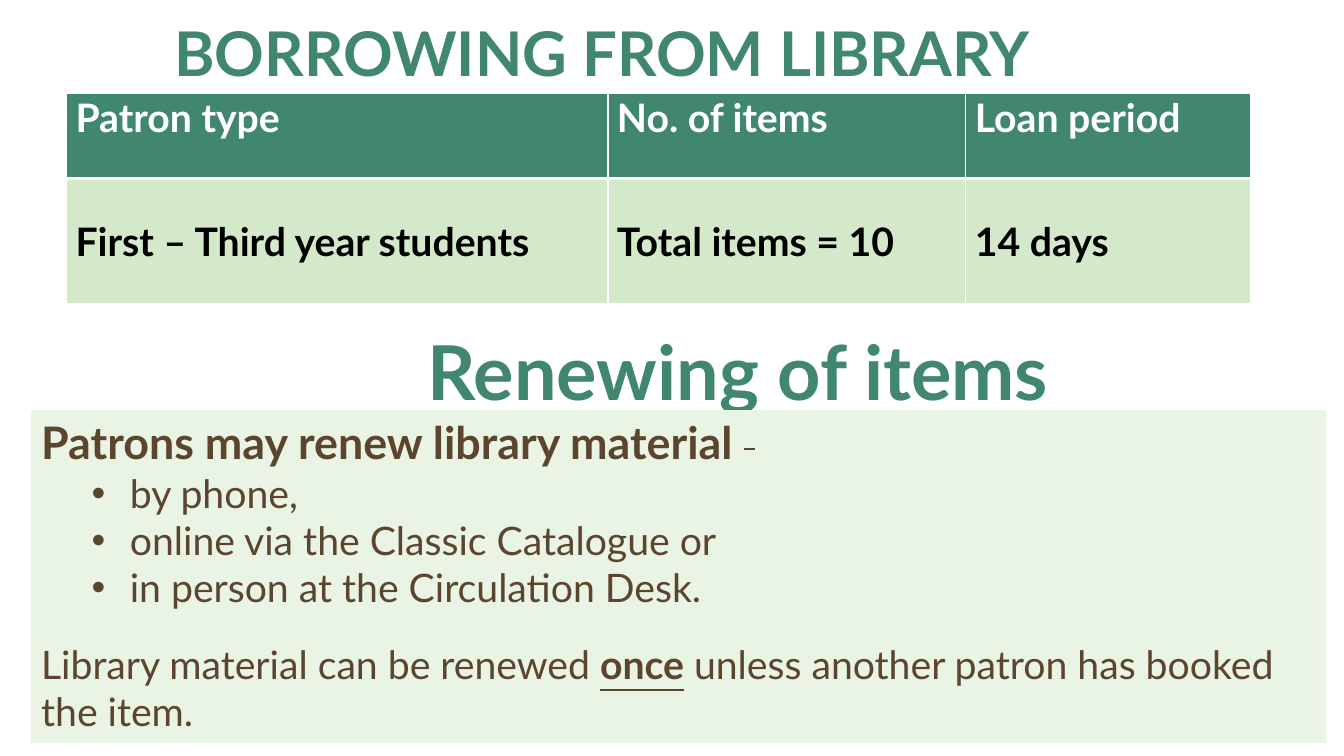
from dataclasses import dataclass

from lxml import etree
from pptx import Presentation
from pptx.dml.color import RGBColor
from pptx.enum.shapes import MSO_SHAPE
from pptx.enum.text import MSO_ANCHOR, PP_ALIGN
from pptx.oxml.ns import qn
from pptx.util import Inches, Pt

RECTANGLE = MSO_SHAPE.RECTANGLE
TOP, MIDDLE = MSO_ANCHOR.TOP, MSO_ANCHOR.MIDDLE
LEFT, CENTER = PP_ALIGN.LEFT, PP_ALIGN.CENTER


@dataclass(frozen=True)
class Theme:
    font: str = "Lato"
    green: str = "418770"
    light_green: str = "D4E9C9"
    pale_green: str = "EAF4E4"
    brown: str = "5C452E"
    black: str = "000000"
    white: str = "FFFFFF"
    title: int = 44
    heading: int = 54
    lead: int = 32
    body: int = 28


@dataclass(frozen=True)
class Heading:
    text: str
    box: tuple[float, float, float, float]
    size: int
    alignment: PP_ALIGN
    inset: tuple[float, float]
    line_spacing: float


@dataclass(frozen=True)
class TableRow:
    texts: tuple[str, ...]
    height: float
    fill: str
    color: str
    anchor: MSO_ANCHOR
    top_line: int
    bottom_line: int


@dataclass(frozen=True)
class BodyLine:
    runs: tuple[str, ...]
    size: int
    bold: bool | None = None
    bullet: bool = False
    space_before: float = 0


THEME = Theme()

HEADINGS = (
    Heading("BORROWING FROM LIBRARY", (1.73, 0.2, 10, 1.52), THEME.title, LEFT, (0, 0), 0.95),
    Heading("Renewing of items", (1.73, 3.17, 11.18, 1.01), THEME.heading, CENTER, (0.1, 0.05), 1),
)

COLUMN_WIDTHS = (5.37, 3.55, 2.82)
ROWS = (
    TableRow(("Patron type", "No. of items", "Loan period"),
             0.84, THEME.green, THEME.white, TOP, 1, 3),
    TableRow(("First – Third year students", "Total items = 10", "14 days"),
             1.24, THEME.light_green, THEME.black, MIDDLE, 3, 1),
)

BODY_LINES = (
    BodyLine(("Patrons may renew library material ", " "), THEME.lead, bold=True),
    BodyLine(("by phone,",), THEME.body, bullet=True),
    BodyLine(("online via the Classic Catalogue or",), THEME.body, bullet=True),
    BodyLine(("in person at the Circulation Desk.",), THEME.body, bullet=True),
    BodyLine(("Library material can be renewed ", "once",
              " unless another patron has booked the item."), THEME.body, space_before=21.6),
)


def style(paragraph, size: int, color: str, bold: bool | None) -> None:
    font = paragraph.font
    font.name, font.size, font.bold = THEME.font, Pt(size), bold
    font.color.rgb = RGBColor.from_string(color)


def add_heading(slide, heading: Heading) -> None:
    shape = slide.shapes.add_textbox(*map(Inches, heading.box))
    frame = shape.text_frame
    frame.word_wrap = True
    frame.margin_left = frame.margin_right = Inches(heading.inset[0])
    frame.margin_top = frame.margin_bottom = Inches(heading.inset[1])
    paragraph = frame.paragraphs[0]
    paragraph.text = heading.text
    paragraph.alignment = heading.alignment
    paragraph.line_spacing = heading.line_spacing
    style(paragraph, heading.size, THEME.green, True)


def set_borders(cell, top: int, bottom: int) -> None:
    properties = cell._tc.get_or_add_tcPr()
    widths = {"a:lnL": 1, "a:lnR": 1, "a:lnT": top, "a:lnB": bottom}
    for index, (tag, width) in enumerate(widths.items()):
        line = etree.Element(qn(tag), w=str(Pt(width)))
        fill = etree.SubElement(line, qn("a:solidFill"))
        etree.SubElement(fill, qn("a:srgbClr"), val=THEME.white)
        properties.insert(index, line)


def add_loan_table(slide) -> None:
    frame = slide.shapes.add_table(
        len(ROWS), len(COLUMN_WIDTHS), Inches(0.66), Inches(0.93),
        Inches(sum(COLUMN_WIDTHS)), Inches(sum(row.height for row in ROWS)))
    table = frame.table
    for column, width in zip(table.columns, COLUMN_WIDTHS):
        column.width = Inches(width)
    for table_row, row in zip(table.rows, ROWS):
        table_row.height = Inches(row.height)
        for cell, text in zip(table_row.cells, row.texts):
            cell.text = text
            cell.vertical_anchor = row.anchor
            cell.margin_left = cell.margin_right = Inches(0.09)
            cell.margin_top = cell.margin_bottom = 0
            cell.fill.solid()
            cell.fill.fore_color.rgb = RGBColor.from_string(row.fill)
            set_borders(cell, row.top_line, row.bottom_line)
            style(cell.text_frame.paragraphs[0], THEME.body, row.color, True)


def add_bullet(paragraph) -> None:
    paragraph.level = 1
    properties = paragraph._p.get_or_add_pPr()
    properties.set("marL", str(Inches(0.88)))
    properties.set("indent", str(Inches(-0.38)))
    etree.SubElement(properties, qn("a:buFont"), typeface="Arial")
    etree.SubElement(properties, qn("a:buChar"), char="•")


def add_renewal_panel(slide) -> None:
    shape = slide.shapes.add_shape(
        RECTANGLE, Inches(0.31), Inches(4.07), Inches(12.84), Inches(3.3))
    shape.shadow.inherit = False
    shape.fill.solid()
    shape.fill.fore_color.rgb = RGBColor.from_string(THEME.pale_green)
    shape.line.fill.background()
    frame = shape.text_frame
    frame.word_wrap = True
    frame.vertical_anchor = TOP
    for index, line in enumerate(BODY_LINES):
        paragraph = frame.add_paragraph() if index else frame.paragraphs[0]
        paragraph.alignment = LEFT
        if line.space_before:
            paragraph.space_before = Pt(line.space_before)
        if line.bullet:
            add_bullet(paragraph)
        style(paragraph, line.size, THEME.brown, line.bold)
        for text in line.runs:
            run = paragraph.add_run()
            run.text = text
            if text == "once":
                run.font.bold = run.font.underline = True
            elif text == " ":
                # The struck space shows as a short dash
                run._r.get_or_add_rPr().set("strike", "sngStrike")


def main() -> None:
    presentation = Presentation()
    presentation.slide_width, presentation.slide_height = Inches(13.33), Inches(7.5)
    slide = presentation.slides.add_slide(presentation.slide_layouts[6])
    title, renewing = HEADINGS

    # Borrowing
    add_heading(slide, title)
    add_loan_table(slide)

    # Renewing
    add_heading(slide, renewing)
    add_renewal_panel(slide)

    presentation.save("out.pptx")


if __name__ == "__main__":
    main()
